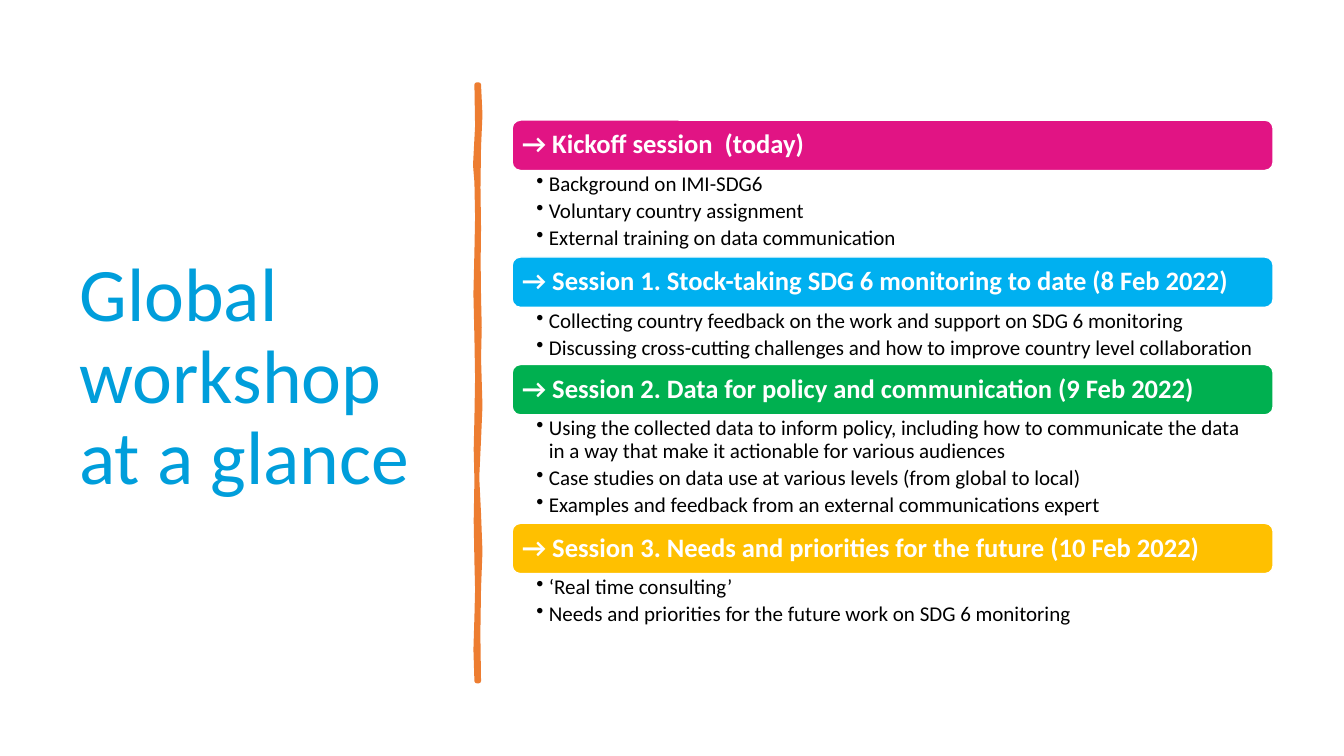
from lxml import etree
from pptx import Presentation
from pptx.dml.color import RGBColor
from pptx.enum.shapes import MSO_SHAPE
from pptx.enum.text import MSO_ANCHOR, PP_ALIGN
from pptx.oxml.ns import qn
from pptx.util import Pt

ROUNDED = MSO_SHAPE.ROUNDED_RECTANGLE
TOP, MIDDLE = MSO_ANCHOR.TOP, MSO_ANCHOR.MIDDLE
LEFT = PP_ALIGN.LEFT

TITLE_BLUE = RGBColor(0x00, 0x9E, 0xDB)
ORANGE = RGBColor(0xED, 0x7D, 0x31)
MAGENTA = RGBColor(0xE1, 0x14, 0x84)
SKY = RGBColor(0x00, 0xB0, 0xF0)
GREEN = RGBColor(0x00, 0xB0, 0x50)
AMBER = RGBColor(0xFF, 0xC0, 0x00)
WHITE = RGBColor(0xFF, 0xFF, 0xFF)
BLACK = RGBColor(0x00, 0x00, 0x00)

SESSIONS_LEFT, SESSIONS_TOP, SESSIONS_WIDTH = 365.8, 85.8, 543.6
BAR_HEIGHT = 36

# Heading, bar colour, height of the list below, list items
SESSIONS = [
    ("→ Kickoff session  (today)", MAGENTA, 61.8, [
        "Background on IMI-SDG6",
        "Voluntary country assignment",
        "External training on data communication"]),
    ("→ Session 1. Stock-taking SDG 6 monitoring to date (8 Feb 2022)", SKY, 40.8, [
        "Collecting country feedback on the work and support on SDG 6 monitoring",
        "Discussing cross-cutting challenges and how to improve country level collaboration"]),
    ("→ Session 2. Data for policy and communication (9 Feb 2022)", GREEN, 77.4, [
        "Using the collected data to inform policy, including how to communicate the data "
        "in a way that make it actionable for various audiences",
        "Case studies on data use at various levels (from global to local)",
        "Examples and feedback from an external communications expert"]),
    ("→ Session 3. Needs and priorities for the future (10 Feb 2022)", AMBER, 40.8, [
        "‘Real time consulting’",
        "Needs and priorities for the future work on SDG 6 monitoring"]),
]

DIVIDER_RIGHT = [
    (342, 60.5), (343, 82), (342, 105), (341.6, 134), (342, 163), (341.7, 187),
    (342, 212), (342.5, 234), (342, 256), (343, 290), (342, 314), (340.7, 341),
    (342, 367), (343, 394), (342, 420), (341.5, 453), (342, 486.5)]
DIVIDER_LEFT = [
    (340.5, 486.5), (339.8, 464), (340.5, 441), (341, 421), (340.5, 401),
    (340, 372), (340.5, 343), (340, 321), (340.5, 299), (341, 270), (340.5, 241),
    (339.8, 210), (340.5, 180), (341, 155), (340.5, 130), (339.5, 118), (341, 90),
    (340.5, 60.5)]


class SlideBuilder:
    font = "Calibri"
    line_spacing = 0.9

    def __init__(self, page):
        self.shapes = page.shapes

    def fill_text(self, shape, texts, insets, anchor, size, color,
                  bold=False, space_after=0, bullet_indent=None):
        frame = shape.text_frame
        left, top, right, bottom = map(Pt, insets)
        frame_format = {
            "word_wrap": True, "vertical_anchor": anchor,
            "margin_left": left, "margin_top": top,
            "margin_right": right, "margin_bottom": bottom}
        for name, value in frame_format.items():
            setattr(frame, name, value)
        for index, text in enumerate(texts):
            para = frame.paragraphs[0] if index == 0 else frame.add_paragraph()
            para_format = {"alignment": LEFT, "line_spacing": self.line_spacing,
                           "space_before": Pt(0), "space_after": Pt(space_after)}
            for name, value in para_format.items():
                setattr(para, name, value)
            if bullet_indent:
                self.add_bullet(para, bullet_indent)
            span = para.add_run()
            span.text = text
            for name, value in {"name": self.font, "size": Pt(size), "bold": bold}.items():
                setattr(span.font, name, value)
            span.font.color.rgb = color

    def add_bullet(self, para, indent):
        properties = para._p.get_or_add_pPr()
        properties.set("marL", str(Pt(indent)))
        properties.set("indent", str(-Pt(indent)))
        etree.SubElement(properties, qn("a:buChar")).set("char", "•")

    def text_box(self, left, top, width, height, texts, **style):
        box = self.shapes.add_textbox(Pt(left), Pt(top), Pt(width), Pt(height))
        self.fill_text(box, texts, **style)

    def paint(self, shape, fill, line, line_width):
        shape.shadow.inherit = False
        shape.fill.solid()
        shape.fill.fore_color.rgb = fill
        shape.line.color.rgb = line
        shape.line.width = Pt(line_width)

    def bar(self, left, top, width, height, text, fill, **style):
        bar = self.shapes.add_shape(ROUNDED, Pt(left), Pt(top), Pt(width), Pt(height))
        self.paint(bar, fill, WHITE, 1)
        self.fill_text(bar, [text], **style)

    def outline(self, points, color, line_width):
        start, *rest = [(Pt(x), Pt(y)) for x, y in points]
        builder = self.shapes.build_freeform(*start)
        builder.add_line_segments(rest, close=True)
        self.paint(builder.convert_to_shape(), color, color, line_width)


def main():
    deck = Presentation()
    deck.slide_width, deck.slide_height = Pt(960), Pt(540)
    slide = SlideBuilder(deck.slides.add_slide(deck.slide_layouts[6]))

    slide.text_box(49.7, 50.4, 269.3, 440, ["Global workshop at a glance"],
                   insets=(7.2, 3.6, 7.2, 3.6), anchor=MIDDLE, size=54, color=TITLE_BLUE)
    slide.outline(DIVIDER_RIGHT + DIVIDER_LEFT, ORANGE, 3.25)

    top = SESSIONS_TOP
    for heading, color, list_height, items in SESSIONS:
        slide.bar(SESSIONS_LEFT, top, SESSIONS_WIDTH, BAR_HEIGHT, heading, color,
                  insets=(5.5, 4, 4, 4), anchor=MIDDLE, size=19, color=WHITE, bold=True)
        top += BAR_HEIGHT
        slide.text_box(SESSIONS_LEFT, top, SESSIONS_WIDTH, list_height, items,
                       insets=(17.25, 1.9, 10.6, 1.9), anchor=TOP, size=15, color=BLACK,
                       space_after=3, bullet_indent=9)
        top += list_height

    deck.save("out.pptx")


if __name__ == "__main__":
    main()
